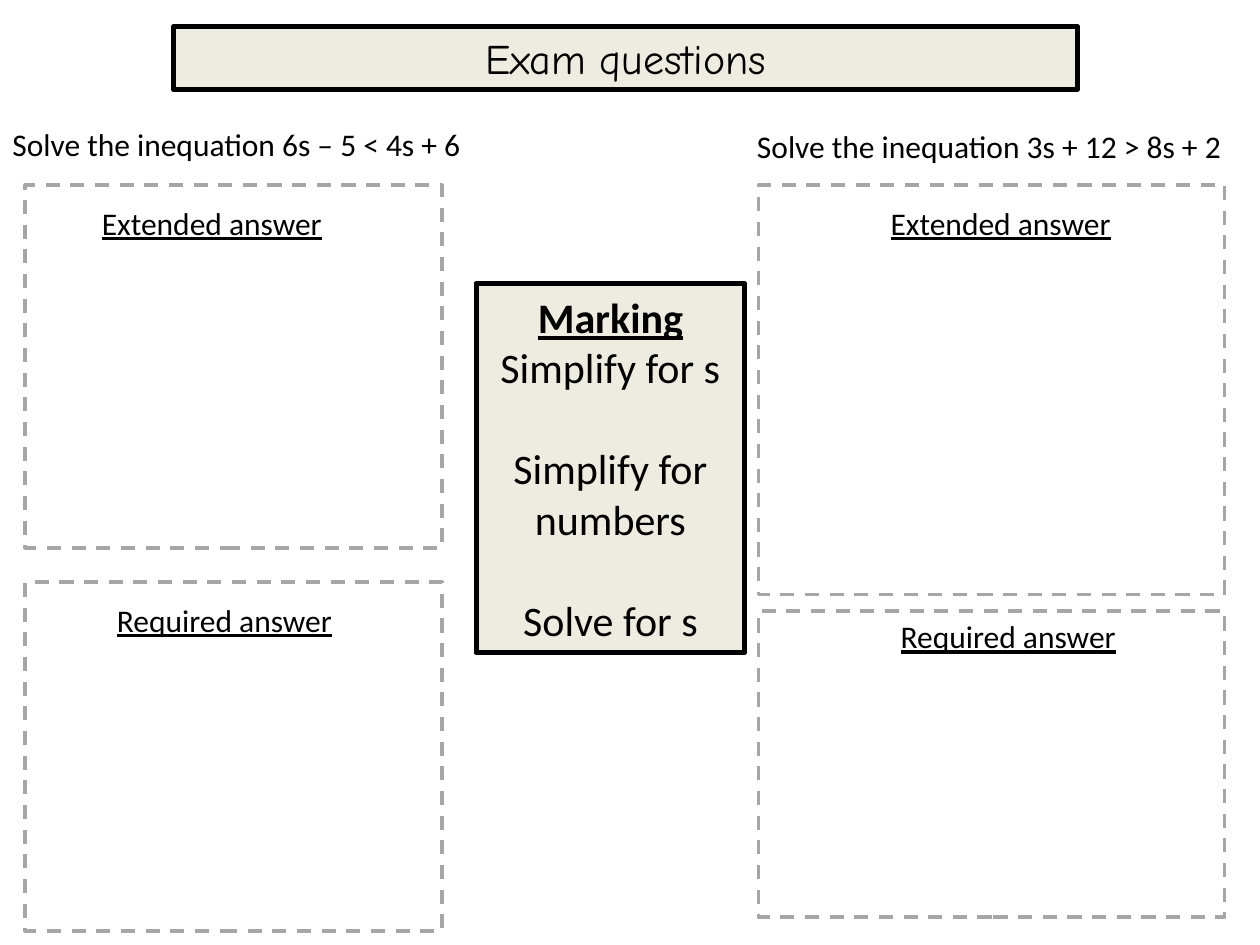
from pptx import Presentation
from pptx.dml.color import RGBColor
from pptx.enum.dml import MSO_LINE_DASH_STYLE as Dash
from pptx.enum.shapes import MSO_SHAPE as Shape
from pptx.enum.text import MSO_ANCHOR as Anchor, MSO_AUTO_SIZE as AutoSize, PP_ALIGN as Align
from pptx.util import Inches, Pt

BLACK = RGBColor(0x00, 0x00, 0x00)
CREAM = RGBColor(0xEE, 0xEC, 0xE1)
GREY = RGBColor(0xA6, 0xA6, 0xA6)

MARKING_STEPS = ["Simplify for s", "Simplify for numbers", "Solve for s"]

# Per column: question, its box, then (label, panel box, label offset and width)
COLUMNS = [
    ("Solve the inequation 6s – 5 < 4s + 6", (0, 0.94, 3.81, 0.4), [
        ("Extended answer", (0.2, 1.47, 3.31, 2.88), (0.51, 0.1, 1.97)),
        ("Required answer", (0.2, 4.62, 3.31, 2.77), (0.63, 0.1, 1.93)),
    ]),
    ("Solve the inequation 3s + 12 > 8s + 2", (5.91, 0.96, 3.94, 0.4), [
        ("Extended answer", (6.02, 1.47, 3.7, 3.25), (0.95, 0.1, 1.97)),
        ("Required answer", (6.02, 4.85, 3.7, 2.43), (1.03, 0, 2.58)),
    ]),
]


def inches(box):
    return [Inches(v) for v in box]


def style_font(p, size, name="Calibri", bold=False, underline=False):
    for r in p.runs:
        r.font.name = name
        r.font.size = Pt(size)
        r.font.bold = bold
        r.font.underline = underline
        r.font.color.rgb = BLACK


def style_card(sp):
    """Cream fill with a heavy black border."""
    sp.fill.solid()
    sp.fill.fore_color.rgb = CREAM
    sp.line.color.rgb = BLACK
    sp.line.width = Pt(3)


def add_title(slide, box):
    sp = slide.shapes.title
    sp.left, sp.top, sp.width, sp.height = inches(box)
    style_card(sp)
    tf = sp.text_frame
    tf.text = "Exam questions"
    tf.auto_size = AutoSize.NONE
    tf.vertical_anchor = Anchor.MIDDLE
    p = tf.paragraphs[0]
    p.alignment = Align.CENTER
    style_font(p, 24, "Comic Neue")


def add_label(slide, box, text, underline=False):
    tf = slide.shapes.add_textbox(*inches(box)).text_frame
    tf.word_wrap = False
    tf.text = text
    style_font(tf.paragraphs[0], 18, underline=underline)


def add_panel(slide, box, label, label_place):
    """Dashed answer area with an underlined label inside."""
    sp = slide.shapes.add_shape(Shape.RECTANGLE, *inches(box))
    sp.shadow.inherit = False
    sp.fill.background()
    sp.line.color.rgb = GREY
    sp.line.width = Pt(2)
    sp.line.dash_style = Dash.DASH
    dx, dy, width = label_place
    add_label(slide, (box[0] + dx, box[1] + dy, width, 0.4), label, underline=True)


def add_marking(slide, box):
    sp = slide.shapes.add_shape(Shape.RECTANGLE, *inches(box))
    sp.shadow.inherit = False
    style_card(sp)
    tf = sp.text_frame
    tf.word_wrap = True
    tf.vertical_anchor = Anchor.MIDDLE
    tf.text = "\n".join(["Marking"] + MARKING_STEPS)
    for i, p in enumerate(tf.paragraphs):
        p.alignment = Align.CENTER
        p.space_before = Pt(29 if i > 1 else 0)
        style_font(p, 24, bold=i == 0, underline=i == 0)


def main():
    prs = Presentation()
    prs.slide_width, prs.slide_height = Inches(10), Inches(7.5)
    slide = prs.slides.add_slide(prs.slide_layouts[5])
    add_title(slide, (1.38, 0.21, 7.17, 0.5))
    for question, question_box, panels in COLUMNS:
        add_label(slide, question_box, question)
        for label, box, label_place in panels:
            add_panel(slide, box, label, label_place)
    add_marking(slide, (3.78, 2.25, 2.13, 2.93))
    prs.save("out.pptx")


if __name__ == "__main__":
    main()
